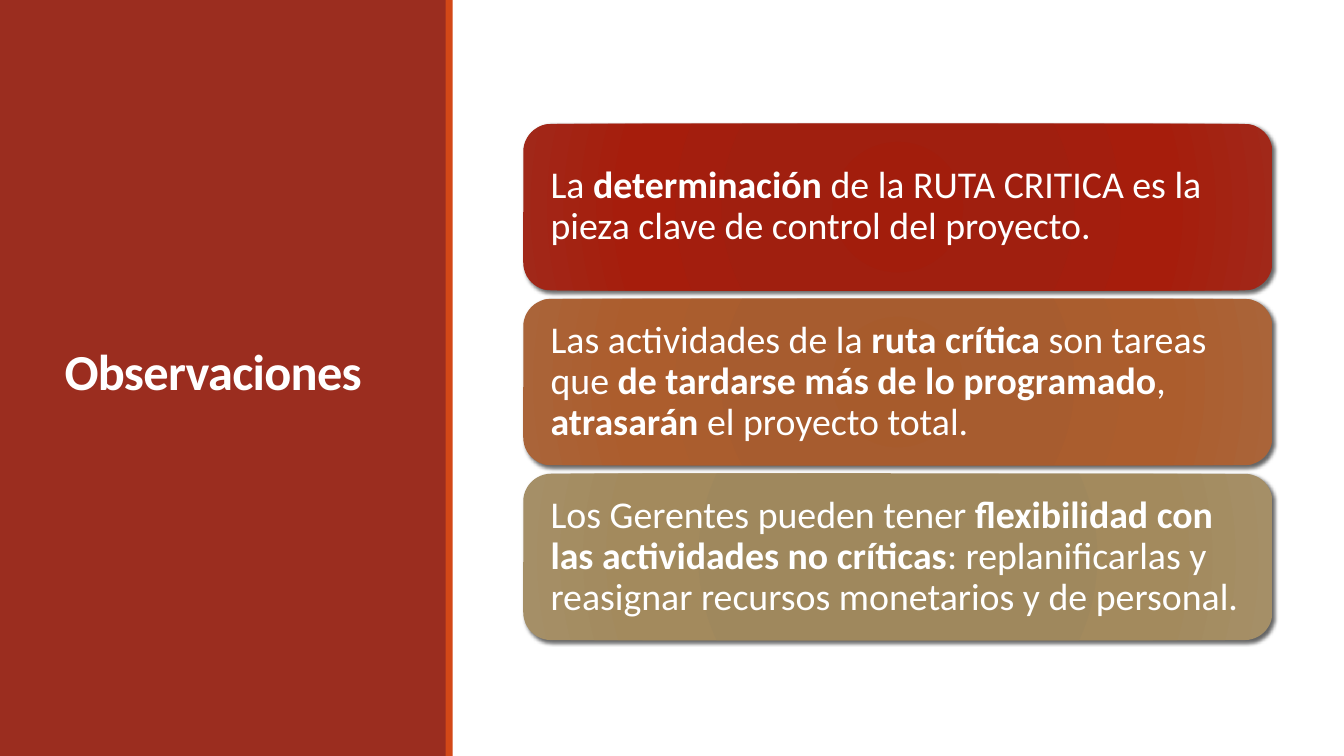
from dataclasses import dataclass

from lxml.etree import SubElement
from pptx import Presentation
from pptx.dml.color import RGBColor
from pptx.enum.shapes import MSO_SHAPE as Preset
from pptx.enum.text import MSO_ANCHOR as Anchor, MSO_AUTO_SIZE as AutoSize, PP_ALIGN as Align
from pptx.oxml.ns import qn
from pptx.util import Inches, Pt


@dataclass(frozen=True)
class Theme:
    font: str = "Calibri"
    panel: str = "9B2D1F"
    accent: str = "D34817"
    text: str = "FFFFFF"
    shadow: str = "000000"
    title_size: int = 36
    card_size: int = 27
    stops: tuple = (0, 34, 70, 100)
    card_fills: tuple = (
        ("A21D0C", "A01F0F", "A61D0C", "A12819"),
        ("A75B2C", "A75C2F", "AC5D2D", "AA6439"),
        ("9F875B", "9F885D", "A38A5D", "A58F67"),
    )


# Asterisks enclose the bold words.
CARDS = (
    "La *determinación *de la RUTA CRITICA es la pieza clave de control del proyecto.",
    "Las actividades de la *ruta crítica* son tareas que "
    "*de tardarse más de lo programado*, *atrasarán* el proyecto total.",
    "Los Gerentes pueden tener *flexibilidad con las actividades no críticas*: "
    "replanificarlas y reasignar recursos monetarios y de personal.",
)


def set_all(target, values):
    for name, value in values.items():
        setattr(target, name, value)


def add_node(parent, tag, **attributes):
    values = {name: str(value) for name, value in attributes.items()}
    return SubElement(parent, qn(tag), values)


class SlideBuilder:
    def __init__(self, page, theme):
        self.page = page
        self.theme = theme

    def put_text(self, box, text, size, spacing, inset):
        """Fill a box with one paragraph, bold between asterisks."""
        frame = box.text_frame
        set_all(frame, {
            "word_wrap": True,
            "auto_size": AutoSize.NONE,
            "vertical_anchor": Anchor.MIDDLE,
            "margin_left": inset, "margin_right": inset,
            "margin_top": inset, "margin_bottom": inset,
        })
        para = frame.paragraphs[0]
        set_all(para, {"alignment": Align.LEFT, "line_spacing": spacing})
        for index, part in enumerate(text.split("*")):
            if part:
                span = para.add_run()
                span.text = part
                set_all(span.font, {"name": self.theme.font, "size": Pt(size),
                                    "bold": index % 2 == 1})
                span.font.color.rgb = RGBColor.from_string(self.theme.text)
        return para

    def shape(self, preset, left, top, width, height):
        box = self.page.shapes.add_shape(
            preset, Inches(left), Inches(top), Inches(width), Inches(height))
        box.shadow.inherit = False
        box.line.fill.background()
        return box

    def bar(self, left, width, color):
        box = self.shape(Preset.RECTANGLE, left, 0, width, 7.5)
        box.fill.solid()
        box.fill.fore_color.rgb = RGBColor.from_string(color)

    def title(self, text):
        box = self.page.shapes.title
        set_all(box, {"left": Inches(0.54), "top": Inches(0.57),
                      "width": Inches(3.37), "height": Inches(6.31)})
        para = self.put_text(box, f"*{text}*", self.theme.title_size, 0.85, Inches(0.1))
        para.runs[0].font._element.set("spc", "-50")
        box.element.getparent().append(box.element)  # in front of the panel

    def radial_fill(self, box, colors):
        box.fill.background()
        properties = box.element.spPr
        empty_fill = properties.find(qn("a:noFill"))
        gradient = add_node(properties, "a:gradFill", rotWithShape=1)
        properties.replace(empty_fill, gradient)
        stops = add_node(gradient, "a:gsLst")
        for position, color in zip(self.theme.stops, colors):
            stop = add_node(stops, "a:gs", pos=position * 1000)
            add_node(stop, "a:srgbClr", val=color)
        circle = add_node(gradient, "a:path", path="circle")
        add_node(circle, "a:fillToRect", l=100000, t=100000, r=100000, b=100000)

    def drop_shadow(self, box):
        effects = box.element.spPr.find(qn("a:effectLst"))
        shadow = add_node(effects, "a:outerShdw", blurRad=Pt(3), dist=Pt(2),
                          dir=45 * 60000, algn="ctr", rotWithShape=0)
        color = add_node(shadow, "a:srgbClr", val=self.theme.shadow)
        add_node(color, "a:alpha", val=60000)

    def card(self, top, text, colors):
        box = self.shape(Preset.ROUNDED_RECTANGLE, 5.19, top, 7.43, 1.65)
        self.radial_fill(box, colors)
        self.drop_shadow(box)
        self.put_text(box, text, self.theme.card_size, 0.9, Inches(0.19))


def main():
    deck = Presentation()
    set_all(deck, {"slide_width": Inches(13.33), "slide_height": Inches(7.5)})
    theme = Theme()
    builder = SlideBuilder(deck.slides.add_slide(deck.slide_layouts[5]), theme)
    builder.bar(0, 4.43, theme.panel)
    builder.title("Observaciones")
    builder.bar(4.42, 0.07, theme.accent)
    first_top, last_top = 1.23, 4.7
    step = (last_top - first_top) / (len(CARDS) - 1)
    for index, (text, colors) in enumerate(zip(CARDS, theme.card_fills)):
        builder.card(first_top + index * step, text, colors)
    deck.save("out.pptx")


if __name__ == "__main__":
    main()
